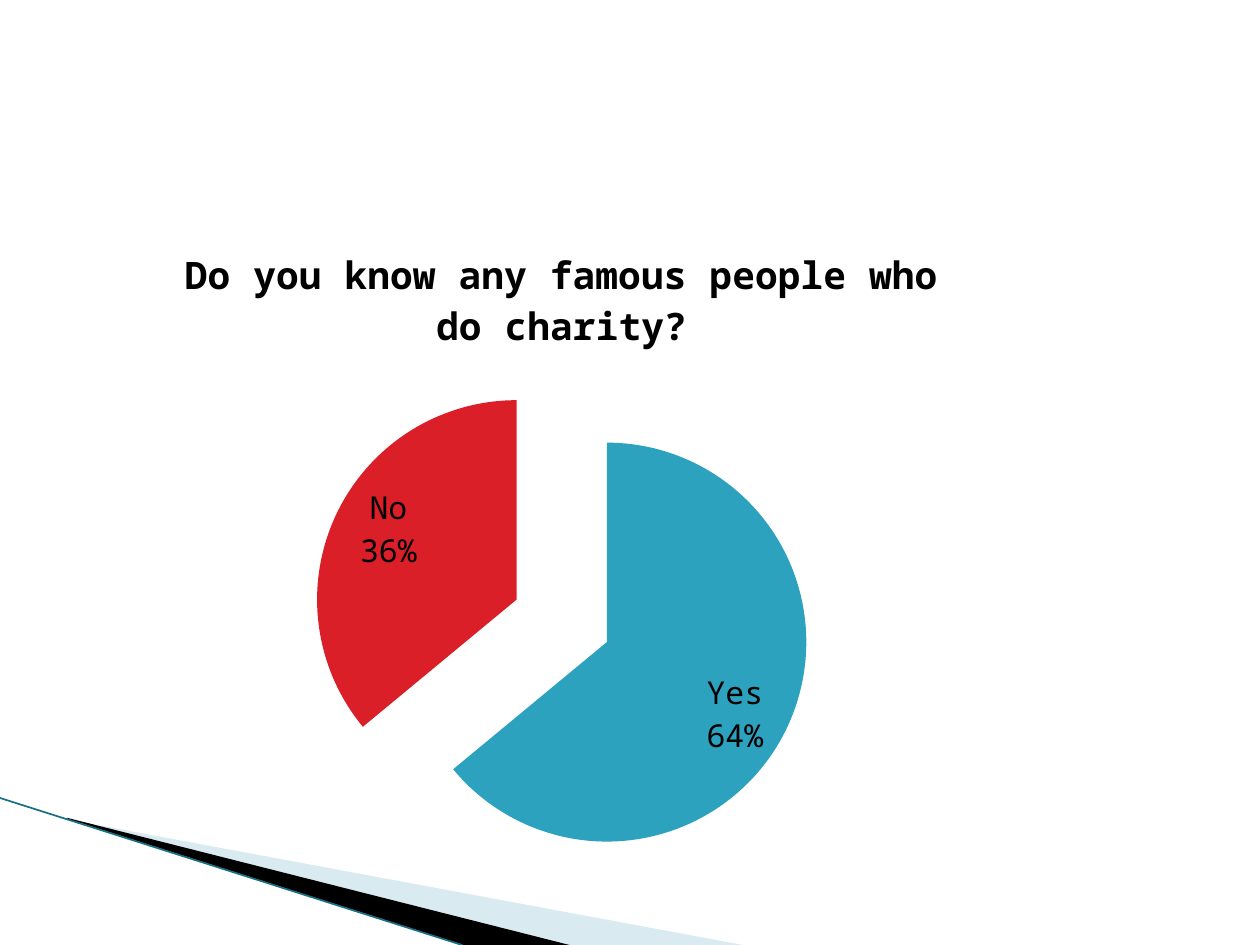
"""Build a slide with an exploded pie chart on charity awareness."""
from lxml import etree
from pptx import Presentation
from pptx.chart.data import CategoryChartData as Data
from pptx.dml.color import RGBColor
from pptx.enum.chart import XL_CHART_TYPE as Kind, XL_LABEL_POSITION as Place
from pptx.enum.shapes import MSO_CONNECTOR as Link
from pptx.oxml.ns import qn
from pptx.util import Pt


def paint(fill, color):
    fill.solid()
    fill.fore_color.rgb = RGBColor.from_string(color)


def style(font, size, bold):
    font.name = "Noto Sans Mono"
    font.size = Pt(size)
    font.bold = bold
    paint(font.fill, "000000")


deck = Presentation()
deck.slide_width, deck.slide_height = Pt(720), Pt(540)
slide = deck.slides.add_slide(deck.slide_layouts[6])
shapes = slide.shapes

wedges = [
    ("A0CBDC", 40, [(39.6, 468.5), (424.5, 540), (325.5, 540), (39.6, 468)]),
    ("000000", 100, [(38.2, 467.3), (325.5, 540), (265, 540), (38.9, 468)]),
]
for color, alpha, spots in wedges:
    first, *rest = [(Pt(x), Pt(y)) for x, y in spots]
    pen = shapes.build_freeform(*first)
    pen.add_line_segments(rest, close=True)
    wedge = pen.convert_to_shape()
    wedge.shadow.inherit = False
    wedge.line.fill.background()
    paint(wedge.fill, color)
    tint = wedge.fill._xPr.find(".//" + qn("a:srgbClr"))
    etree.SubElement(tint, qn("a:alpha"), val=str(alpha * 1000))

edge = shapes.add_connector(Link.STRAIGHT, Pt(0), Pt(456), Pt(264), Pt(540))
paint(edge.line.fill, "176F84")
edge.line.width = Pt(0.95)
etree.SubElement(edge._element.spPr, qn("a:effectLst"))

data = Data()
data.categories = ["Yes", "No"]
data.add_series("Series 1", [64, 36])
frame = shapes.add_chart(Kind.PIE, Pt(36), Pt(124), Pt(570), Pt(381.6), data)
chart = frame.chart
style(chart.font, 18, False)
chart.has_legend = False
title = chart.chart_title.text_frame
title.text = "Do you know any famous people who do charity?"
style(title.paragraphs[0].font, 21.6, True)

plot = chart.plots[0]
plot.vary_by_categories = True
pie = plot.series[0]
for i, color in enumerate(["2DA2BF", "DA1F28"]):
    paint(pie.points[i].format.fill, color)
burst = etree.Element(qn("c:explosion"), val="25")
pie._element.find(qn("c:dPt")).addprevious(burst)

area = plot._element.getparent()
for old in area.findall(qn("c:layout")):
    area.remove(old)
layout = etree.Element(qn("c:layout"))
area.insert(0, layout)
manual = etree.SubElement(layout, qn("c:manualLayout"))
rules = [("layoutTarget", "inner"), ("xMode", "edge"), ("yMode", "edge"),
         ("x", "0.25"), ("y", "0.23"), ("w", "0.5"), ("h", "0.75")]
for tag, val in rules:
    etree.SubElement(manual, qn("c:" + tag), val=val)

labels = pie.data_labels
labels.show_value = False
labels.show_category_name = True
labels.show_percentage = True
labels.position = Place.BEST_FIT
style(labels.font, 18, False)
split = etree.Element(qn("c:separator"))
split.text = "\n"
labels._element.find(qn("c:showBubbleSize")).addnext(split)

deck.save("out.pptx")
